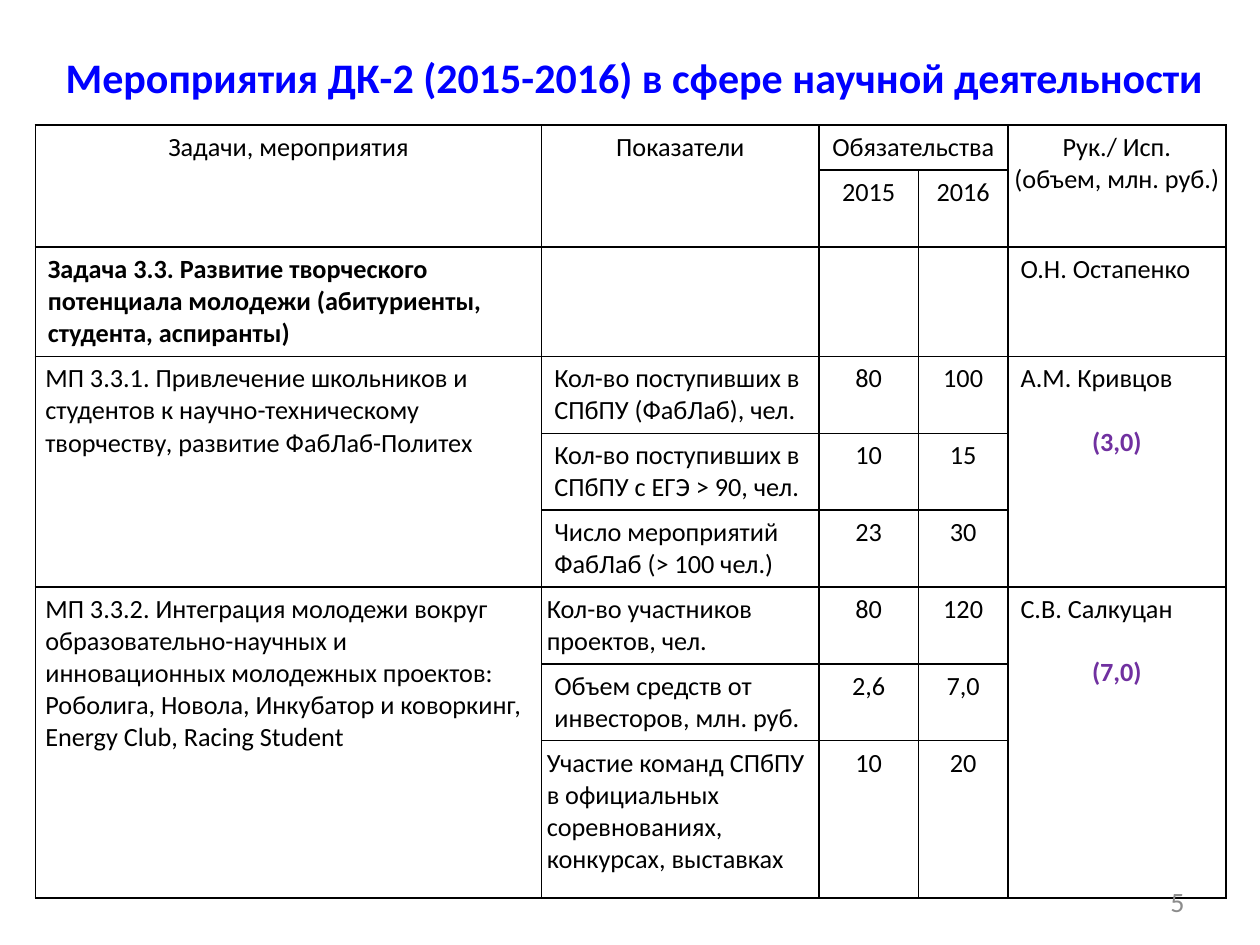
"""Build the slide with the table of research activities for 2015-2016."""
from lxml.etree import SubElement
from pptx import Presentation
from pptx.dml.color import RGBColor
from pptx.enum.text import MSO_ANCHOR, PP_ALIGN as Align
from pptx.oxml import parse_xml
from pptx.oxml.ns import nsdecls, qn
from pptx.util import Inches, Pt

FONT = "Calibri"
COLORS = {"title": "0000FF", "text": "000000", "amount": "7030A0", "number": "8C8C8C"}
TITLE = "Мероприятия ДК-2 (2015-2016) в сфере научной деятельности"
PAGE_NUMBER = "5"
HEADERS = [
    ["Задачи, мероприятия", "Показатели", "Обязательства", "", "Рук./ Исп.\n(объем, млн. руб.)"],
    ["", "", "2015", "2016", ""],
]
TASK = ("Задача 3.3. Развитие творческого потенциала молодежи (абитуриенты, студента, аспиранты)",
        "О.Н. Остапенко")
ACTIVITIES = [
    {"name": "МП 3.3.1. Привлечение школьников и студентов к научно-техническому творчеству, "
             "развитие ФабЛаб-Политех",
     "leader": "А.М. Кривцов", "amount": "(3,0)",
     "measures": [("Кол-во поступивших в СПбПУ (ФабЛаб), чел.", "80", "100"),
                  ("Кол-во поступивших в СПбПУ с ЕГЭ > 90, чел.", "10", "15"),
                  ("Число мероприятий ФабЛаб (> 100 чел.)", "23", "30")]},
    {"name": "МП 3.3.2. Интеграция молодежи вокруг образовательно-научных и инновационных "
             "молодежных проектов: Роболига, Новола, Инкубатор и коворкинг, "
             "Energy Club, Racing Student",
     "leader": "С.В. Салкуцан", "amount": "(7,0)",
     "measures": [("Кол-во участников проектов, чел.", "80", "120"),
                  ("Объем средств от инвесторов, млн. руб.", "2,6", "7,0"),
                  ("Участие команд СПбПУ в официальных соревнованиях, конкурсах, выставках",
                   "10", "20")]},
]
COLUMNS = [4.02, 2.2, 0.79, 0.71, 1.73]
ROWS = [0.36, 0.61, 0.87] + [0.61] * 5 + [1.25]
MERGES = [(0, 0, 1, 0), (0, 1, 1, 1), (0, 2, 0, 3), (0, 4, 1, 4),
          (3, 0, 5, 0), (3, 4, 5, 4), (6, 0, 8, 0), (6, 4, 8, 4)]
SIDE_INSETS = {(0, 2): (0.04, 0.04), (0, 4): (0.04, 0.04), (3, 0): (0.08, 0.04),
               (6, 0): (0.08, 0.1), (6, 1): (0.04, 0.1), (8, 1): (0.04, 0.04)}


def style(para, size, color="text", bold=False, align=Align.LEFT):
    para.alignment = align
    for span in para.runs:
        span.font.name, span.font.size, span.font.bold = FONT, Pt(size), bold
        span.font.color.rgb = RGBColor.from_string(COLORS[color])


def add_text(page, place, text, size, color, bold, align):
    frame = page.shapes.add_textbox(*map(Inches, place)).text_frame
    frame.word_wrap = True
    frame.vertical_anchor = MSO_ANCHOR.MIDDLE
    frame.text = text
    style(frame.paragraphs[0], size, color, bold, align)


def add_borders(cell):
    props = cell._tc.get_or_add_tcPr()
    for index, side in enumerate(("lnL", "lnR", "lnT", "lnB")):
        line = parse_xml(f'<a:{side} {nsdecls("a")} w="{Pt(1)}"/>')
        fill = SubElement(line, qn("a:solidFill"))
        SubElement(fill, qn("a:srgbClr"), val=COLORS["text"])
        props.insert(index, line)


def table_rows():
    rows = HEADERS + [[TASK[0], "", "", "", TASK[1]]]
    for activity in ACTIVITIES:
        for index, measure in enumerate(activity["measures"]):
            name, leader = "", ""
            if index == 0:
                name = activity["name"]
                leader = activity["leader"] + "\n" + activity["amount"]
            rows.append([name, *measure, leader])
    return rows


def fill_cell(cell, row, column, text):
    cell.fill.background()
    add_borders(cell)
    left, right = SIDE_INSETS.get((row, column), (0.1, 0.1))
    cell.margin_left, cell.margin_right = Inches(left), Inches(right)
    cell.text_frame.text = text
    header = row < len(HEADERS)
    centred = header or column in (2, 3)
    for index, para in enumerate(cell.text_frame.paragraphs):
        if index and not header:
            style(para, 15, "amount", True, Align.CENTER)
            para.space_before = Pt(18)
        else:
            style(para, 15, bold=text == TASK[0], align=Align.CENTER if centred else Align.LEFT)
        if not para.runs:
            para.font.size = Pt(15)


def add_activities(page):
    place = map(Inches, (0.28, 0.99, sum(COLUMNS), sum(ROWS)))
    table = page.shapes.add_table(len(ROWS), len(COLUMNS), *place).table
    table.first_row = table.horz_banding = False
    for column, width in zip(table.columns, COLUMNS):
        column.width = Inches(width)
    for row, height in zip(table.rows, ROWS):
        row.height = Inches(height)
    for row, values in enumerate(table_rows()):
        for column, text in enumerate(values):
            fill_cell(table.cell(row, column), row, column, text)
    for top, left, bottom, right in MERGES:
        table.cell(top, left).merge(table.cell(bottom, right))


def main():
    deck = Presentation()
    deck.slide_width, deck.slide_height = Inches(10), Inches(7.5)
    page = deck.slides.add_slide(deck.slide_layouts[6])
    add_text(page, (0.35, 0.29, 9.37, 0.63), TITLE, 24, "title", True, Align.CENTER)
    add_activities(page)
    add_text(page, (7.17, 6.95, 2.33, 0.4), PAGE_NUMBER, 16, "number", False, Align.RIGHT)
    deck.save("out.pptx")


if __name__ == "__main__":
    main()
